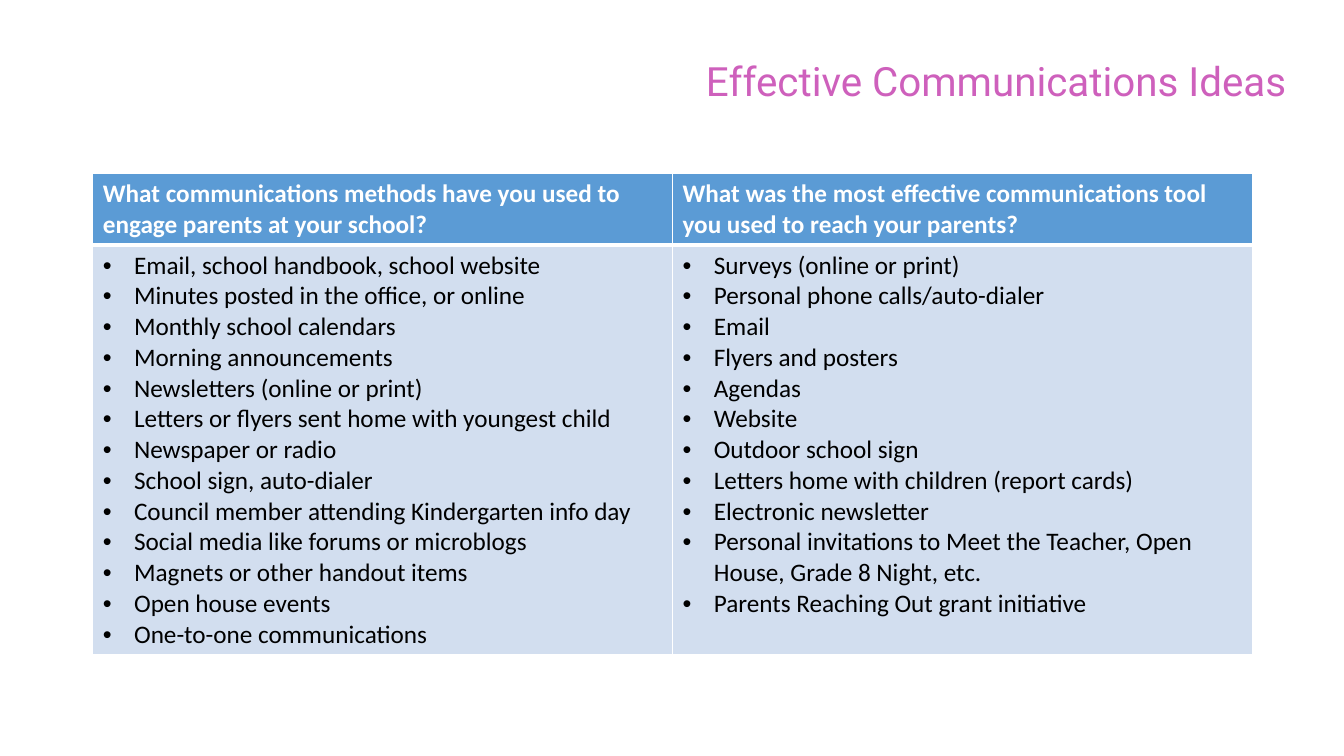
import pptx
import pptx.dml.color
import pptx.enum.text
import pptx.oxml.ns
import pptx.util
from lxml import etree

RGBColor = pptx.dml.color.RGBColor
PINK = RGBColor(0xCE, 0x60, 0xBC)
BLUE = RGBColor(0x5B, 0x9B, 0xD5)
PALE_BLUE = RGBColor(0xD2, 0xDE, 0xEF)
WHITE = RGBColor(0xFF, 0xFF, 0xFF)
BLACK = RGBColor(0, 0, 0)

PX = 9144  # 100 px to the inch
TITLE_ONLY = 5
HEADER_HEIGHT = 70
INDENT = 31

COLUMNS = [
    ("What communications methods have you used to engage parents at your school?", [
        "Email, school handbook, school website",
        "Minutes posted in the office, or online",
        "Monthly school calendars",
        "Morning announcements",
        "Newsletters (online or print)",
        "Letters or flyers sent home with youngest child",
        "Newspaper or radio",
        "School sign, auto-dialer",
        "Council member attending Kindergarten info day",
        "Social media like forums or microblogs",
        "Magnets or other handout items",
        "Open house events",
        "One-to-one communications",
    ]),
    ("What was the most effective communications tool you used to reach your parents?", [
        "Surveys (online or print)",
        "Personal phone calls/auto-dialer",
        "Email",
        "Flyers and posters",
        "Agendas",
        "Website",
        "Outdoor school sign",
        "Letters home with children (report cards)",
        "Electronic newsletter",
        "Personal invitations to Meet the Teacher, Open House, Grade 8 Night, etc.",
        "Parents Reaching Out grant initiative",
    ]),
]


def px(length):
    return pptx.util.Emu(length * PX)


def add_element(parent, tag, **attributes):
    element = etree.SubElement(parent, pptx.oxml.ns.qn(tag))
    for name, value in attributes.items():
        element.set(name, str(value))
    return element


def add_span(para, text, font, size, color, bold=False):
    span = para.add_run()
    span.text = text
    span.font.name = font
    span.font.size = pptx.util.Pt(size)
    span.font.bold = bold
    span.font.color.rgb = color


def add_bullet(para):
    properties = para._p.get_or_add_pPr()
    properties.set("marL", str(px(INDENT)))
    properties.set("indent", str(-px(INDENT)))
    add_element(properties, "a:buFont", typeface="Arial")
    add_element(properties, "a:buChar", char="•")


def style_cell(cell, fill, top, bottom):
    """Give the cell white borders, with top and bottom widths in points, and a fill."""
    properties = cell._tc.get_or_add_tcPr()
    for side, width in (("L", 1), ("R", 1), ("T", top), ("B", bottom)):
        line = add_element(properties, "a:ln" + side, w=pptx.util.Pt(width))
        add_element(add_element(line, "a:solidFill"), "a:srgbClr", val=WHITE)
    cell.fill.solid()
    cell.fill.fore_color.rgb = fill


def place_title(slide, left, top, width, height):
    title = slide.shapes.title
    title.left, title.top, title.width, title.height = map(px, (left, top, width, height))
    frame = title.text_frame
    frame.auto_size = pptx.enum.text.MSO_AUTO_SIZE.NONE
    frame.word_wrap = True
    frame.vertical_anchor = pptx.enum.text.MSO_ANCHOR.MIDDLE
    para = frame.paragraphs[0]
    para.alignment = pptx.enum.text.PP_ALIGN.RIGHT
    add_span(para, "Effective Communications Ideas", "Roboto", 28.8, PINK)


def add_ideas_table(slide, left, top, width, height):
    box = map(px, (left, top, width, height))
    table = slide.shapes.add_table(2, len(COLUMNS), *box).table
    table.rows[0].height = px(HEADER_HEIGHT)
    table.rows[1].height = px(height - HEADER_HEIGHT)
    for index, (question, ideas) in enumerate(COLUMNS):
        header, body = table.cell(0, index), table.cell(1, index)
        style_cell(header, BLUE, top=1, bottom=3)
        add_span(header.text_frame.paragraphs[0], question, "Calibri", 18, WHITE, bold=True)
        style_cell(body, PALE_BLUE, top=3, bottom=1)
        frame = body.text_frame
        for number, idea in enumerate(ideas):
            para = frame.add_paragraph() if number else frame.paragraphs[0]
            add_bullet(para)
            add_span(para, idea, "Calibri", 18, BLACK)


def main():
    deck = pptx.Presentation()
    deck.slide_width, deck.slide_height = px(1333), px(750)
    slide = deck.slides.add_slide(deck.slide_layouts[TITLE_ONLY])
    place_title(slide, 44, 52, 1242, 55)
    add_ideas_table(slide, 92, 172, 1150, 470)
    deck.save("out.pptx")


if __name__ == "__main__":
    main()
